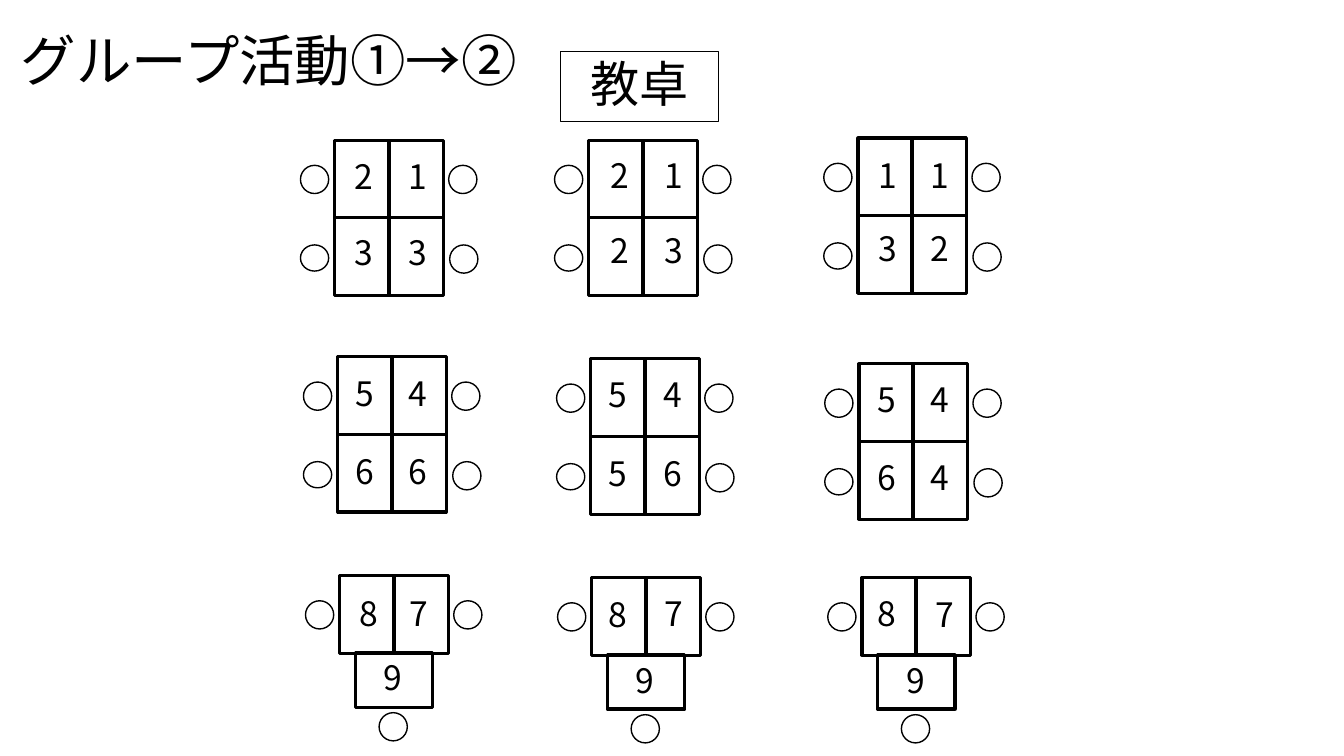
from dataclasses import dataclass

from lxml import etree
from pptx import Presentation
from pptx.dml.color import RGBColor
from pptx.enum.shapes import MSO_SHAPE
from pptx.enum.text import MSO_ANCHOR, PP_ALIGN
from pptx.oxml.ns import qn
from pptx.util import Inches, Pt

RECTANGLE, CIRCLE = MSO_SHAPE.RECTANGLE, MSO_SHAPE.OVAL
LEFT, CENTER = PP_ALIGN.LEFT, PP_ALIGN.CENTER
MIDDLE = MSO_ANCHOR.MIDDLE


@dataclass(frozen=True)
class Theme:
    ink: RGBColor = RGBColor(0, 0, 0)
    paper: RGBColor = RGBColor(255, 255, 255)
    heading_font: str = "Calibri"
    number_font: str = "Noto Sans CJK JP"
    title_size: float = 39.6
    podium_size: float = 35.1
    number_size: float = 24
    desk_line: float = 2.25
    chair_line: float = 1
    podium_line: float = 0.75
    line_spacing: float = 0.9


@dataclass(frozen=True)
class Table:
    left: float
    top: float
    numbers: str      # one digit per desk, row by row
    columns: tuple    # left edges of the numbers
    rows: tuple       # top edges of the numbers


THEME = Theme()

# Desk grid inside a table, in inches
DESK_WIDTH, DESK_HEIGHT = 0.54, 0.77
COLUMN_STEP = 0.535
CHAIR = 0.28
LEFT_CHAIR, RIGHT_CHAIR, CHAIR_DROP = -0.34, 1.13, 0.25
CHAIR_ROW_STEP = 0.79
NUMBER_WIDTH, NUMBER_HEIGHT = 0.39, 0.43

TABLES_OF_FOUR = (
    Table(3.32, 1.39, "2133", (3.42, 3.95), (1.56, 2.31)),
    Table(5.84, 1.39, "2123", (5.96, 6.49), (1.55, 2.29)),
    Table(8.51, 1.37, "1132", (8.61, 9.13), (1.55, 2.27)),
    Table(3.35, 3.54, "5466", (3.43, 3.95), (3.71, 4.48)),
    Table(5.86, 3.56, "5456", (5.94, 6.48), (3.72, 4.5)),
    Table(8.52, 3.61, "5464", (8.6, 9.13), (3.77, 4.54)),
)
TABLES_OF_THREE = (
    Table(3.37, 5.71, "879", (3.47, 3.96, 3.71), (5.89, 5.89, 6.53)),
    Table(5.87, 5.73, "879", (5.94, 6.49, 6.2), (5.9, 5.89, 6.56)),
    Table(8.55, 5.73, "879", (8.6, 9.18, 8.89), (5.89, 5.9, 6.56)),
)


def inches(*lengths):
    return [Inches(length) for length in lengths]


def add_outline(shapes, kind, box, line_width, fill=None):
    shape = shapes.add_shape(kind, *inches(*box))
    shape.shadow.inherit = False
    if fill is None:
        shape.fill.background()
    else:
        shape.fill.solid()
        shape.fill.fore_color.rgb = fill
    shape.line.color.rgb = THEME.ink
    shape.line.width = Pt(line_width)
    return shape


def add_desk(shapes, left, top, rotation=0):
    box = (left, top, DESK_WIDTH, DESK_HEIGHT)
    add_outline(shapes, RECTANGLE, box, THEME.desk_line).rotation = rotation


def add_chair(shapes, left, top, height=CHAIR):
    add_outline(shapes, CIRCLE, (left, top, CHAIR, height), THEME.chair_line)


def write_text(shape, text, size, font_name, alignment=LEFT):
    frame = shape.text_frame
    frame.word_wrap = True
    frame.vertical_anchor = MIDDLE
    frame.text = text
    paragraph = frame.paragraphs[0]
    paragraph.alignment = alignment
    paragraph.line_spacing = THEME.line_spacing
    font = paragraph.runs[0].font
    font.size = Pt(size)
    font.name = font_name
    font.color.rgb = THEME.ink
    # Japanese glyphs take the East Asian typeface
    properties = paragraph.runs[0].font._element
    etree.SubElement(properties, qn("a:ea"), typeface=THEME.number_font)


def add_text(slide, box, text, size, font_name):
    write_text(slide.shapes.add_textbox(*inches(*box)), text, size, font_name)


def add_number(slide, left, top, number):
    box = (left, top, NUMBER_WIDTH, NUMBER_HEIGHT)
    add_text(slide, box, number, THEME.number_size, THEME.number_font)


def add_top_row(shapes, table):
    for column in range(2):
        add_desk(shapes, table.left + column * COLUMN_STEP, table.top)
    for offset in (LEFT_CHAIR, RIGHT_CHAIR):
        add_chair(shapes, table.left + offset, table.top + CHAIR_DROP)


def add_table_of_four(slide, table):
    shapes = slide.shapes.add_group_shape().shapes
    add_top_row(shapes, table)
    # Lower desks face the other way
    for column in range(2):
        add_desk(shapes, table.left + column * COLUMN_STEP, table.top + DESK_HEIGHT, 180)
    chair_top = table.top + CHAIR_DROP + CHAIR_ROW_STEP
    add_chair(shapes, table.left + LEFT_CHAIR, chair_top, 0.26)
    add_chair(shapes, table.left + RIGHT_CHAIR + 0.01, chair_top)
    for index, number in enumerate(table.numbers):
        row, column = divmod(index, 2)
        add_number(slide, table.columns[column], table.rows[row], number)


def add_table_of_three(slide, table):
    shapes = slide.shapes.add_group_shape().shapes
    add_top_row(shapes, table)
    # Third desk lies crosswise at the end
    add_desk(shapes, table.left + COLUMN_STEP / 2, table.top + 0.65, 90)
    add_chair(shapes, table.left + 0.39, table.top + 1.36)
    for left, top, number in zip(table.columns, table.rows, table.numbers):
        add_number(slide, left, top, number)


def main():
    presentation = Presentation()
    presentation.slide_width, presentation.slide_height = inches(13.33, 7.5)
    slide = presentation.slides.add_slide(presentation.slide_layouts[6])

    # Heading and teacher's desk
    add_text(slide, (0.11, 0.26, 5.19, 0.75), "グループ活動①→②",
             THEME.title_size, THEME.heading_font)
    podium = add_outline(slide.shapes, RECTANGLE, (5.56, 0.51, 1.57, 0.7),
                         THEME.podium_line, THEME.paper)
    write_text(podium, "教卓", THEME.podium_size, THEME.heading_font, CENTER)

    # Seating plan
    for table in TABLES_OF_FOUR:
        add_table_of_four(slide, table)
    for table in TABLES_OF_THREE:
        add_table_of_three(slide, table)

    presentation.save("out.pptx")


if __name__ == "__main__":
    main()
